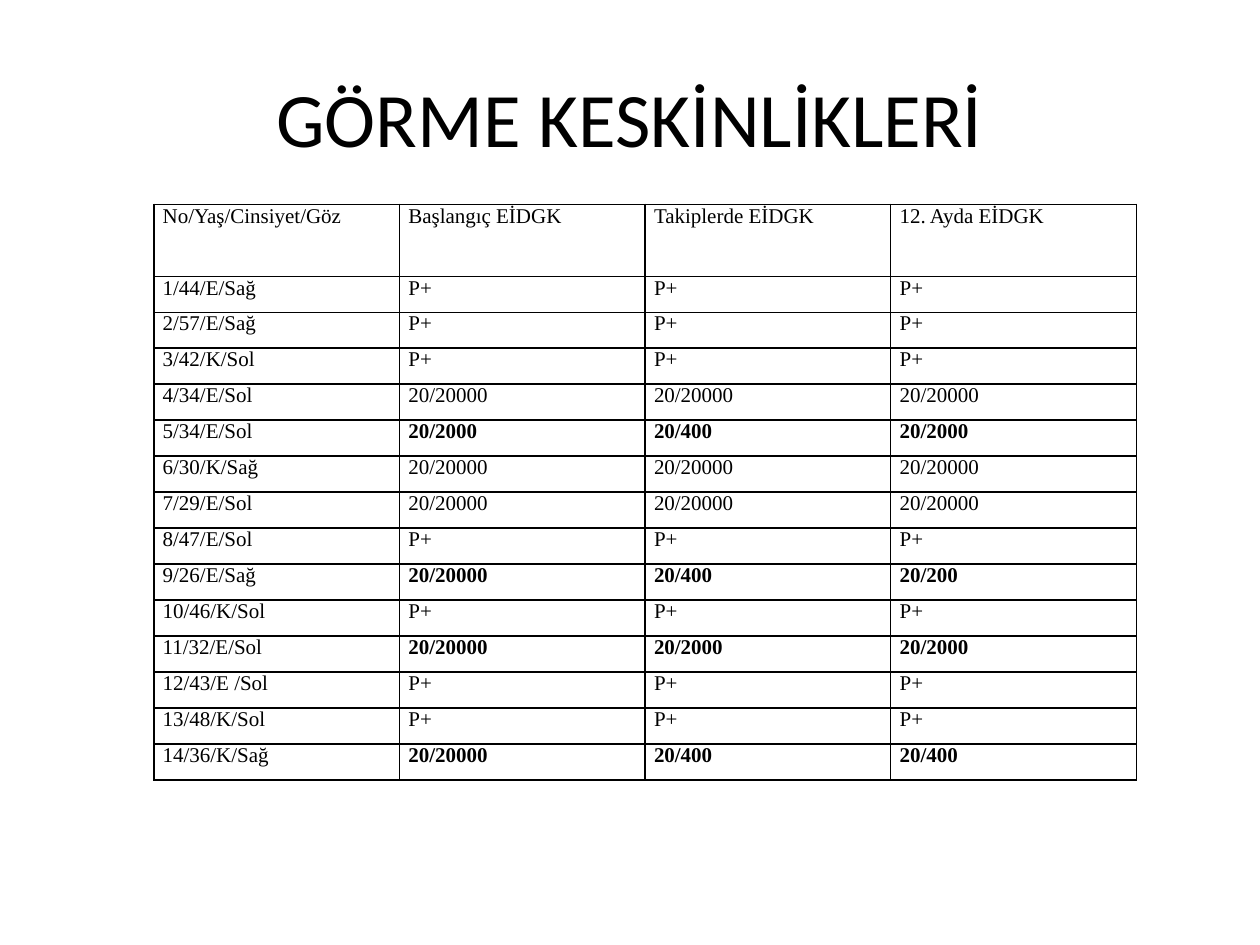
from lxml import etree
from pptx import Presentation
from pptx.dml.color import RGBColor
from pptx.enum import text
from pptx.oxml import ns
from pptx.util import Cm, Pt

BLACK = RGBColor(0, 0, 0)

HEADINGS = ("No/Yaş/Cinsiyet/Göz", "Başlangıç EİDGK", "Takiplerde EİDGK", "12. Ayda EİDGK")
STEADY_LIGHT = ("P+",) * 3
STEADY_LOW = ("20/20000",) * 3
PATIENTS = (
    ("1/44/E/Sağ", STEADY_LIGHT),
    ("2/57/E/Sağ", STEADY_LIGHT),
    ("3/42/K/Sol", STEADY_LIGHT),
    ("4/34/E/Sol", STEADY_LOW),
    ("5/34/E/Sol", ("20/2000", "20/400", "20/2000")),
    ("6/30/K/Sağ", STEADY_LOW),
    ("7/29/E/Sol", STEADY_LOW),
    ("8/47/E/Sol", STEADY_LIGHT),
    ("9/26/E/Sağ", ("20/20000", "20/400", "20/200")),
    ("10/46/K/Sol", STEADY_LIGHT),
    ("11/32/E/Sol", ("20/20000", "20/2000", "20/2000")),
    ("12/43/E /Sol", STEADY_LIGHT),
    ("13/48/K/Sol", STEADY_LIGHT),
    ("14/36/K/Sağ", ("20/20000", "20/400", "20/400")),
)


def add_run(paragraph, words, font_name, size, bold=False):
    run = paragraph.add_run()
    run.text = words
    run.font.name = font_name
    run.font.size = Pt(size)
    run.font.bold = bold
    run.font.color.rgb = BLACK


def add_title(slide, words):
    title = slide.shapes.add_textbox(Cm(1.27), Cm(0.76), Cm(22.86), Cm(3.18))
    frame = title.text_frame
    frame.word_wrap = True
    frame.vertical_anchor = text.MSO_ANCHOR.MIDDLE
    heading = frame.paragraphs[0]
    heading.alignment = text.PP_ALIGN.CENTER
    add_run(heading, words, "Calibri", 44)


def draw_borders(cell):
    properties = cell._tc.get_or_add_tcPr()
    for side in ("lnL", "lnR", "lnT", "lnB"):
        line = etree.SubElement(properties, ns.qn(f"a:{side}"), w=str(Pt(1)))
        fill = etree.SubElement(line, ns.qn("a:solidFill"))
        etree.SubElement(fill, ns.qn("a:srgbClr"), val=str(BLACK))


def fill_cell(cell, words, bold):
    draw_borders(cell)
    cell.fill.background()
    cell.margin_left = cell.margin_right = Cm(0.18)
    cell.margin_top = cell.margin_bottom = 0
    add_run(cell.text_frame.paragraphs[0], words, "Times New Roman", 12, bold)


def add_acuity_table(slide):
    """Acuities that change during follow-up are bold; the header is two rows high."""
    row_count = len(PATIENTS) + 1
    width, height = Cm(19.81), Cm(11.6)
    row_height = height // (row_count + 1)
    table = slide.shapes.add_table(
        row_count, len(HEADINGS), Cm(3.1), Cm(4.12), width, height).table
    table.first_row = table.horz_banding = False
    for column in table.columns:
        column.width = width // len(HEADINGS)
    for row in table.rows:
        row.height = row_height
    table.rows[0].height = 2 * row_height

    for column, words in enumerate(HEADINGS):
        fill_cell(table.cell(0, column), words, bold=False)
    for row, (patient, acuities) in enumerate(PATIENTS, start=1):
        fill_cell(table.cell(row, 0), patient, bold=False)
        changed = len(set(acuities)) > 1
        for column, acuity in enumerate(acuities, start=1):
            fill_cell(table.cell(row, column), acuity, bold=changed)


def main():
    presentation = Presentation()
    presentation.slide_width, presentation.slide_height = Cm(25.4), Cm(19.05)
    slide = presentation.slides.add_slide(presentation.slide_layouts[6])
    add_title(slide, "GÖRME KESKİNLİKLERİ")
    add_acuity_table(slide)
    presentation.save("out.pptx")


if __name__ == "__main__":
    main()
